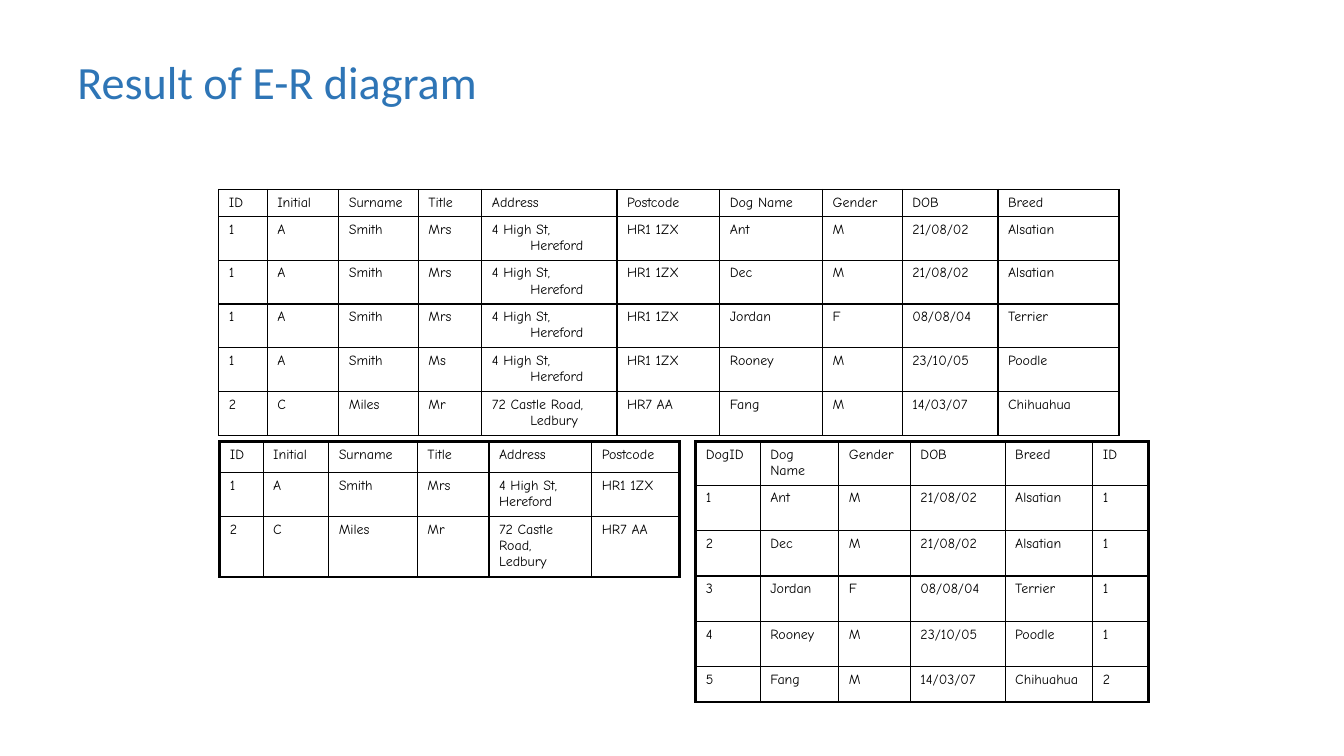
import pptx
import pptx.dml.color
import pptx.enum.text
import pptx.oxml
import pptx.oxml.ns
import pptx.util

Inches, Pt = pptx.util.Inches, pptx.util.Pt
INK, BLUE = "000000", "2E75B6"
THIN, THICK = 1, 2.25

# Owner and dog details, one line per dog
HEAD = ["ID", "Initial", "Surname", "Title", "Address", "Postcode",
        "Dog Name", "Gender", "DOB", "Breed"]
SMITH = ["1", "A", "Smith", "Mrs", "4 High St, Hereford", "HR1 1ZX"]
SMITH_MS = SMITH[:3] + ["Ms"] + SMITH[4:]
MILES = ["2", "C", "Miles", "Mr", "72 Castle Road, Ledbury", "HR7 AA"]
DOGS = [
    SMITH + ["Ant", "M", "21/08/02", "Alsatian"],
    SMITH + ["Dec", "M", "21/08/02", "Alsatian"],
    SMITH + ["Jordan", "F", "08/08/04", "Terrier"],
    SMITH_MS + ["Rooney", "M", "23/10/05", "Poodle"],
    MILES + ["Fang", "M", "14/03/07", "Chihuahua"],
]


def color(code):
    return pptx.dml.color.RGBColor.from_string(code)


def style(para, face, size, code):
    para.font.name = face
    para.font.size = Pt(size)
    para.font.color.rgb = color(code)


def border(cell, widths):
    """Draw the left, right, top and bottom edges, in points."""
    props = cell._tc.get_or_add_tcPr()
    for place, (side, width) in enumerate(zip("LRTB", widths)):
        props.insert(place, pptx.oxml.parse_xml(
            f'<a:ln{side} {pptx.oxml.ns.nsdecls("a")} w="{Pt(width)}">'
            f'<a:solidFill><a:srgbClr val="{INK}"/></a:solidFill>'
            f'</a:ln{side}>'))


def title(slide, left, top, width, height):
    box = slide.shapes.add_textbox(
        Inches(left), Inches(top), Inches(width), Inches(height))
    frame = box.text_frame
    frame.word_wrap = True
    frame.vertical_anchor = pptx.enum.text.MSO_ANCHOR.MIDDLE
    para = frame.paragraphs[0]
    para.text = "Result of E-R diagram"
    para.line_spacing = 0.9
    style(para, "Calibri", 33, BLUE)


def grid(slide, left, top, cols, rows, data, edge=THIN, hang=0):
    """Place a table; edge is the outer line, hang the hanging indent."""
    table = slide.shapes.add_table(
        len(rows), len(cols), Inches(left), Inches(top),
        Inches(sum(cols)), Inches(sum(rows))).table
    table.first_row = table.horz_banding = False
    for col, width in zip(table.columns, cols):
        col.width = Inches(width)
    for row, height in zip(table.rows, rows):
        row.height = Inches(height)
    for r, line in enumerate(data):
        for c, text in enumerate(line):
            cell = table.cell(r, c)
            cell.fill.background()
            outer = (c == 0, c == len(cols) - 1, r == 0, r == len(rows) - 1)
            border(cell, [edge if out else THIN for out in outer])
            para = cell.text_frame.paragraphs[0]
            para.text = text
            if hang:
                props = para._p.get_or_add_pPr()
                props.set("marL", str(Inches(hang)))
                props.set("indent", str(-Inches(hang)))
            style(para, "Comic Neue", 10, INK)


def main():
    deck = pptx.Presentation()
    deck.slide_width, deck.slide_height = Inches(13.33), Inches(7.5)
    slide = deck.slides.add_slide(deck.slide_layouts[6])
    title(slide, 0.67, 0.13, 11, 1.42)

    # Combined table
    grid(slide, 2.17, 1.88,
         [0.48, 0.71, 0.79, 0.63, 1.34, 1.02, 1.02, 0.79, 0.95, 1.2],
         [0.26] + [0.42] * 4 + [0.44], [HEAD] + DOGS, hang=0.38)

    # Owners, each listed once
    grid(slide, 2.18, 4.38, [0.43, 0.65, 0.88, 0.71, 1.02, 0.87],
         [0.31, 0.43, 0.6], [HEAD[:6], SMITH, MILES], edge=THICK)

    # Dogs, numbered and linked to their owner
    dogs = [[str(n), *dog[6:], dog[0]] for n, dog in enumerate(DOGS, 1)]
    grid(slide, 6.9, 4.38, [0.64, 0.78, 0.71, 0.94, 0.87, 0.55],
         [0.43] + [0.45] * 4 + [0.35],
         [["DogID", *HEAD[6:], HEAD[0]]] + dogs, edge=THICK)

    deck.save("out.pptx")


if __name__ == "__main__":
    main()
